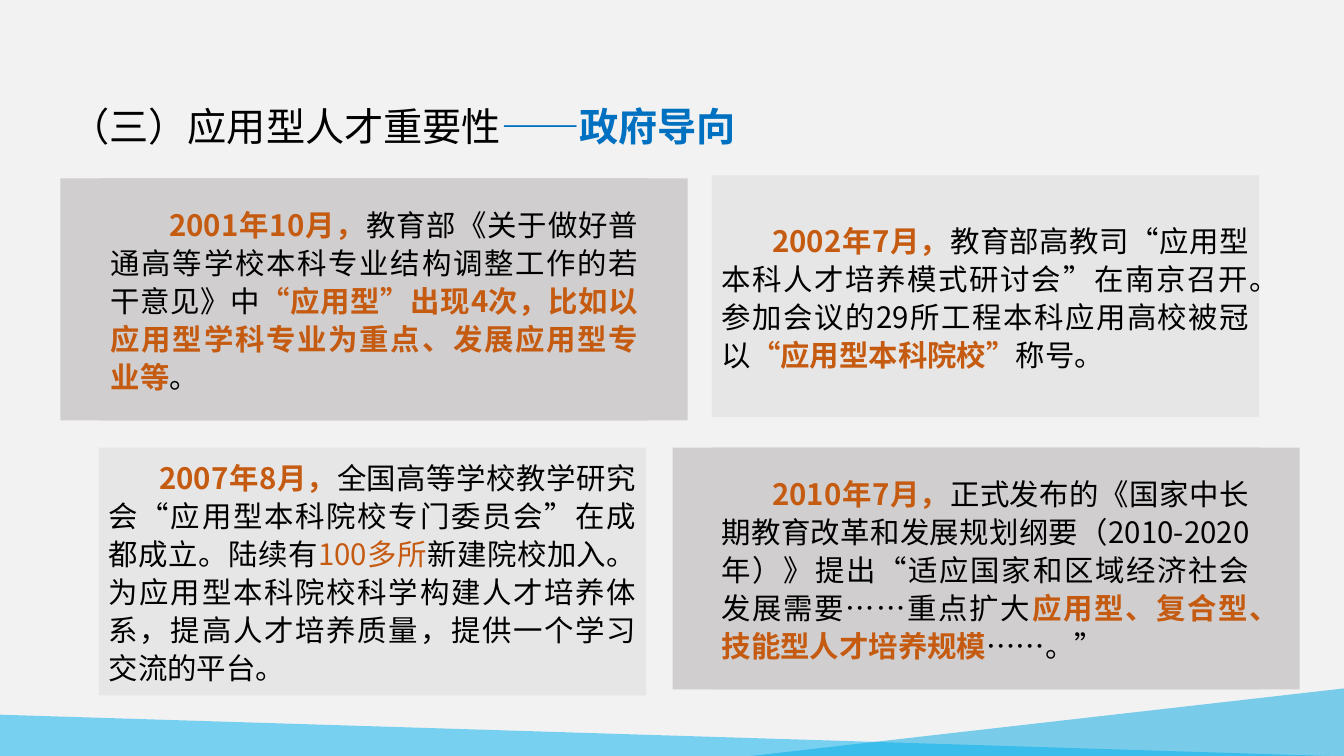
import pptx
import pptx.util
import pptx.dml.color
import pptx.enum.shapes
import pptx.enum.text
import pptx.oxml.ns
from lxml import etree

Inches = pptx.util.Inches
Pt = pptx.util.Pt
SHAPE = pptx.enum.shapes.MSO_SHAPE
ALIGN = pptx.enum.text.PP_ALIGN
ANCHOR = pptx.enum.text.MSO_ANCHOR
qn = pptx.oxml.ns.qn

FONT = "Noto Sans CJK SC"
COLORS = {
    "background": "F2F2F2",
    "wave_dark": "00A7E2",
    "wave_light": "00B0F0",
    "gray": "D0CECE",
    "light": "E7E6E6",
    "text": "000000",
    "accent": "C55A11",
    "title": "0070C0",
}


def rgb(name):
    return pptx.dml.color.RGBColor.from_string(COLORS[name])


def add_block(slide, box, color, kind=SHAPE.RECTANGLE):
    """Add a filled shape without line or shadow; box is in inches."""
    sp = slide.shapes.add_shape(kind, *map(Inches, box))
    sp.shadow.inherit = False
    sp.fill.solid()
    sp.fill.fore_color.rgb = rgb(color)
    sp.line.fill.background()
    return sp


def add_wave(slide, box, color, flip=False):
    """Add a half-transparent triangle at the foot of the slide."""
    sp = add_block(slide, box, color, SHAPE.RIGHT_TRIANGLE)
    fill_color = sp._element.spPr.find(qn("a:solidFill"))[0]
    etree.SubElement(fill_color, qn("a:alpha"), val="50000")
    if flip:
        sp._element.spPr.find(qn("a:xfrm")).set("flipH", "1")


def add_run(p, text, size=21, color="text", bold=False):
    r = p.add_run()
    r.text = text
    r.font.size = Pt(size)
    r.font.name = FONT
    r.font.bold = bold
    r.font.color.rgb = rgb(color)
    etree.SubElement(r.font._element, qn("a:ea"), typeface=FONT)


def add_card(slide, box, color, runs, indent=0.5):
    """Add a panel of justified text; runs are (text, color, bold)."""
    sp = add_block(slide, box, color)
    tf = sp.text_frame
    tf.word_wrap = True
    tf.vertical_anchor = ANCHOR.MIDDLE
    p = tf.paragraphs[0]
    p.alignment = ALIGN.JUSTIFY
    p.line_spacing = Pt(27.2)
    pPr = p._p.get_or_add_pPr()
    pPr.set("marL", "0")
    pPr.set("indent", str(Inches(indent)))
    for text, run_color, bold in runs:
        add_run(p, text, color=run_color, bold=bold)


def add_title(slide, box, plain, strong):
    tf = slide.shapes.add_textbox(*map(Inches, box)).text_frame
    tf.word_wrap = True
    p = tf.paragraphs[0]
    add_run(p, plain, size=28)
    add_run(p, strong, size=28, color="title", bold=True)


def main():
    prs = pptx.Presentation()
    prs.slide_width = Inches(13.33)
    prs.slide_height = Inches(7.5)
    slide = prs.slides.add_slide(prs.slide_layouts[6])
    slide.background.fill.solid()
    slide.background.fill.fore_color.rgb = rgb("background")

    add_wave(slide, (7.45, 6.83, 5.88, 0.67), "wave_dark", flip=True)
    add_wave(slide, (0, 7.09, 13.18, 0.41), "wave_light")
    for left, top in ((6.67, 4.44), (0.6, 1.77)):
        add_block(slide, (left, top, 6.22, 2.4), "gray")

    add_card(slide, (1, 1.77, 5.43, 2.4), "gray", [
        ("2001年10月，", "accent", True),
        ("教育部《关于做好普通高等学校本科专业结构调整工作的若干意见》中", "text", False),
        ("“应用型”出现4次，比如以应用型学科专业为重点、发展应用型专业等", "accent", True),
        ("。", "text", False),
    ], indent=0.58)
    add_card(slide, (0.98, 4.44, 5.43, 2.46), "light", [
        ("2007年8月，", "accent", True),
        ("全国高等学校教学研究会“应用型本科院校专门委员会”在成都成立。陆续有", "text", False),
        ("100多所", "accent", False),
        ("新建院校加入。为应用型本科院校科学构建人才培养体系，"
         "提高人才培养质量，提供一个学习交流的平台。", "text", False),
    ])
    add_card(slide, (7.06, 4.44, 5.43, 2.4), "gray", [
        ("2010年7月，", "accent", True),
        ("正式发布的《国家中长期教育改革和发展规划纲要（2010-2020 年）》"
         "提出“适应国家和区域经济社会发展需要……重点扩大", "text", False),
        ("应用型、复合型、技能型人才培养规模", "accent", True),
        ("……。”", "text", False),
    ])
    add_card(slide, (7.06, 1.74, 5.43, 2.4), "light", [
        ("2002年7月，", "accent", True),
        ("教育部高教司“应用型本科人才培养模式研讨会”在南京召开。"
         "参加会议的29所工程本科应用高校被冠以", "text", False),
        ("“应用型本科院校”", "accent", True),
        ("称号。", "text", False),
    ])
    add_title(slide, (0.6, 0.97, 7.56, 0.57), "（三）应用型人才重要性", "——政府导向")

    prs.save("out.pptx")


if __name__ == "__main__":
    main()
